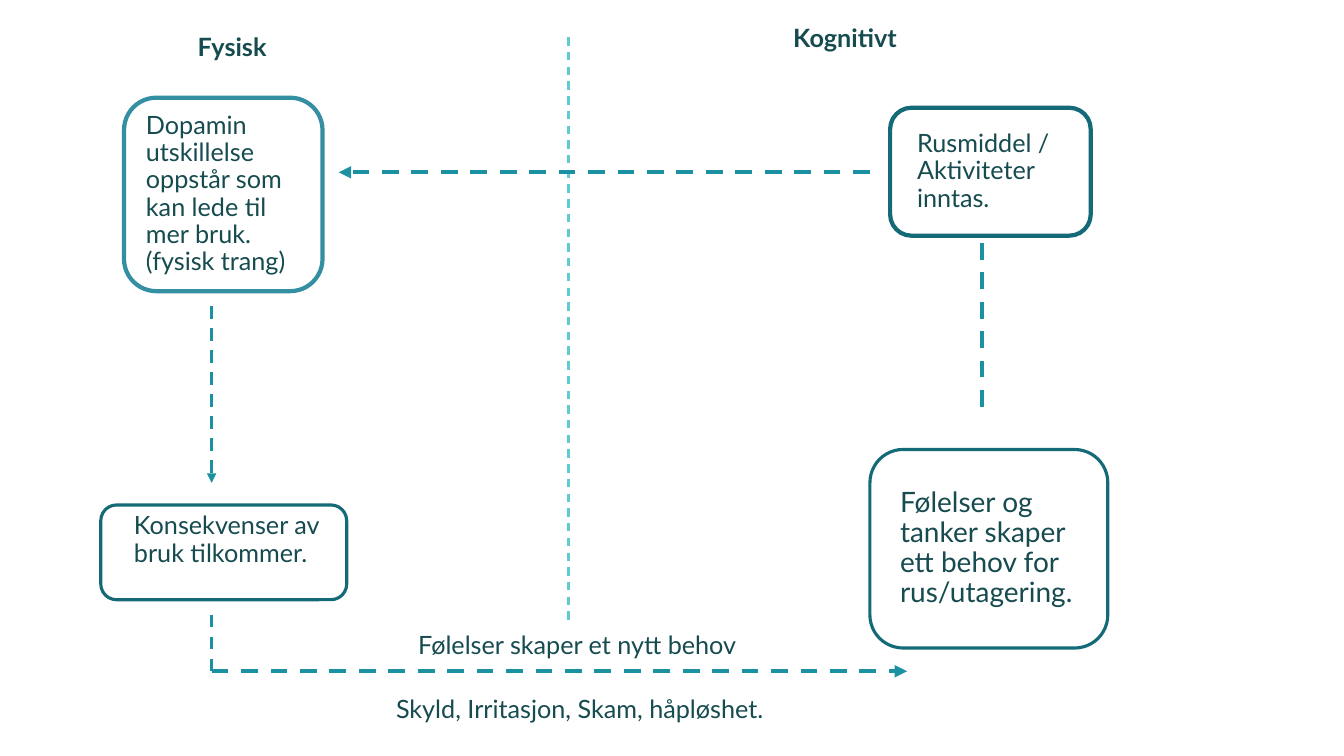
from dataclasses import dataclass

from lxml import etree
from pptx import Presentation
from pptx.dml.color import RGBColor
from pptx.enum.dml import MSO_LINE
from pptx.enum.shapes import MSO_CONNECTOR, MSO_SHAPE
from pptx.enum.text import MSO_ANCHOR, MSO_AUTO_SIZE
from pptx.oxml.ns import qn
from pptx.util import Pt

ROUND = MSO_SHAPE.ROUNDED_RECTANGLE
STRAIGHT = MSO_CONNECTOR.STRAIGHT
DASH = MSO_LINE.DASH
TOP = MSO_ANCHOR.TOP
GROW = MSO_AUTO_SIZE.SHAPE_TO_FIT_TEXT

HUES = {"ink": "164B4F", "deep": "146B77", "soft": "358FA3",
        "flow": "1B91A1", "split": "5FCAD2"}
FRAME = {"word_wrap": True, "auto_size": GROW, "vertical_anchor": TOP}
PARA = {"line_spacing": 0.9, "space_before": Pt(0)}
FONT = {"name": "Lato", "bold": False}

LOW = 479.5
LEFT = 151.2


@dataclass
class Box:
    x: float
    y: float
    wide: float
    high: float
    hue: str
    line: float


@dataclass
class Note:
    x: float
    y: float
    wide: float
    high: float
    text: str
    size: float = 18


@dataclass
class Link:
    x1: float
    y1: float
    x2: float
    y2: float
    line: float = 3
    hue: str = "flow"
    head: bool = False


BOXES = [
    Box(621.4, 321.1, 169.9, 141.8, "deep", 2.25),
    Box(635.8, 77, 143.3, 91.4, "deep", 3),
    Box(88.6, 69.8, 141.8, 138.2, "soft", 3),
    Box(72, 360.7, 175.7, 67.7, "deep", 2.25),
]
HEADS = {
    1: Note(133.9, 20.9, 136.1, 26.6, "Fysisk"),
    3: Note(559.4, 15.1, 198.7, 26.6, "Kognitivt"),
}
NOTES = [
    Note(635.8, 344.9, 141.8, 94.3,
         "Følelser og tanker skaper ett behov for rus/utagering.", 20),
    Note(648, 90, 118.8, 66.2, "Rusmiddel /\nAktiviteter inntas."),
    Note(97.2, 77, 124.6, 125.3,
         "Dopamin utskillelse oppstår som kan lede til mer bruk. (fysisk trang)"),
    Note(88.6, 362.9, 147.6, 66.2, "Konsekvenser av bruk tilkommer."),
    Note(275.8, 493.9, 292.3, 26.6, "Skyld, Irritasjon, Skam, håpløshet."),
    Note(291.6, 448.6, 260.6, 26.6, "Følelser skaper et nytt behov"),
]
LINKS = [
    Link(406.1, 26.6, 406.1, 445, 1.5, "split"),
    Link(701.3, 173.5, 701.3, 298.1),
    Link(621.4, 123.1, 241.9, 123.1, head=True),
    Link(LEFT, 218.9, LEFT, 344.9, 2.25, head=True),
    Link(LEFT, 439.2, LEFT, LOW, 2.25),
    Link(LEFT, LOW, 648, LOW, head=True),
]


def apply(item, form: dict) -> None:
    for key, val in form.items():
        setattr(item, key, val)


def tint(hue: str) -> RGBColor:
    return RGBColor.from_string(HUES[hue])


def stroke(shape, hue: str, line: float) -> None:
    shape.line.color.rgb = tint(hue)
    shape.line.width = Pt(line)


def write(shape, note: Note, bold: bool = False) -> None:
    frame = shape.text_frame
    frame.text = note.text
    apply(frame, FRAME)
    for para in frame.paragraphs:
        apply(para, PARA)
        for run in para.runs:
            apply(run.font, FONT | {"size": Pt(note.size), "bold": bold})
            run.font.color.rgb = tint("ink")


def draw_box(slide, box: Box) -> None:
    shape = slide.shapes.add_shape(
        ROUND, Pt(box.x), Pt(box.y), Pt(box.wide), Pt(box.high))
    shape.shadow.inherit = False
    shape.fill.background()
    stroke(shape, box.hue, box.line)


def draw_note(slide, note: Note) -> None:
    shape = slide.shapes.add_textbox(
        Pt(note.x), Pt(note.y), Pt(note.wide), Pt(note.high))
    write(shape, note)


def draw_link(slide, link: Link) -> None:
    shape = slide.shapes.add_connector(
        STRAIGHT, Pt(link.x1), Pt(link.y1), Pt(link.x2), Pt(link.y2))
    stroke(shape, link.hue, link.line)
    shape.line.dash_style = DASH
    if link.head:
        etree.SubElement(shape.line._get_or_add_ln(), qn("a:tailEnd"),
                         type="triangle")
    etree.SubElement(shape._element.spPr, qn("a:effectLst"))


def fill_heads(slide) -> None:
    for hold in list(slide.placeholders):
        note = HEADS.get(hold.placeholder_format.idx)
        if note is None:
            hold._element.getparent().remove(hold._element)
            continue
        apply(hold, {"left": Pt(note.x), "top": Pt(note.y),
                     "width": Pt(note.wide), "height": Pt(note.high)})
        write(hold, note, bold=True)


def main() -> None:
    deck = Presentation()
    apply(deck, {"slide_width": Pt(960), "slide_height": Pt(540)})
    slide = deck.slides.add_slide(deck.slide_layouts[4])
    fill_heads(slide)
    for box in BOXES:
        draw_box(slide, box)
    for link in LINKS:
        draw_link(slide, link)
    for note in NOTES:
        draw_note(slide, note)
    deck.save("out.pptx")


if __name__ == "__main__":
    main()
